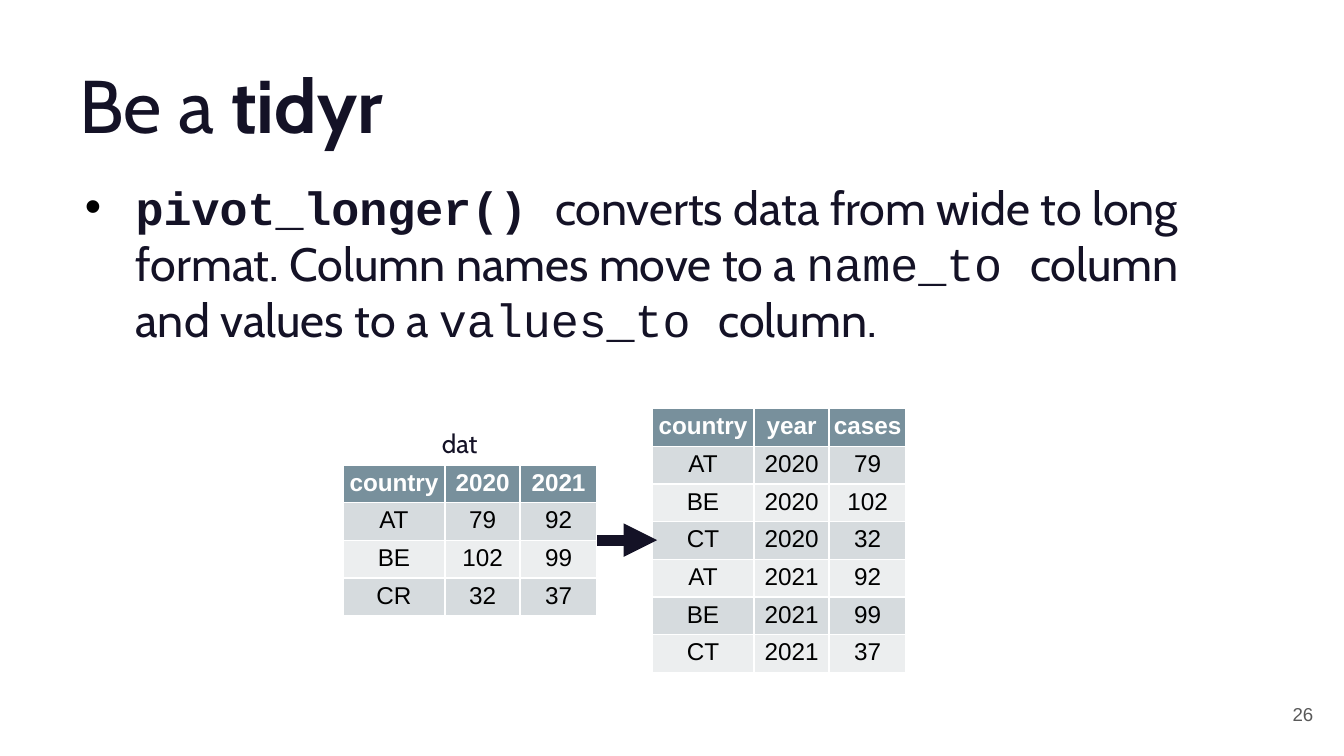
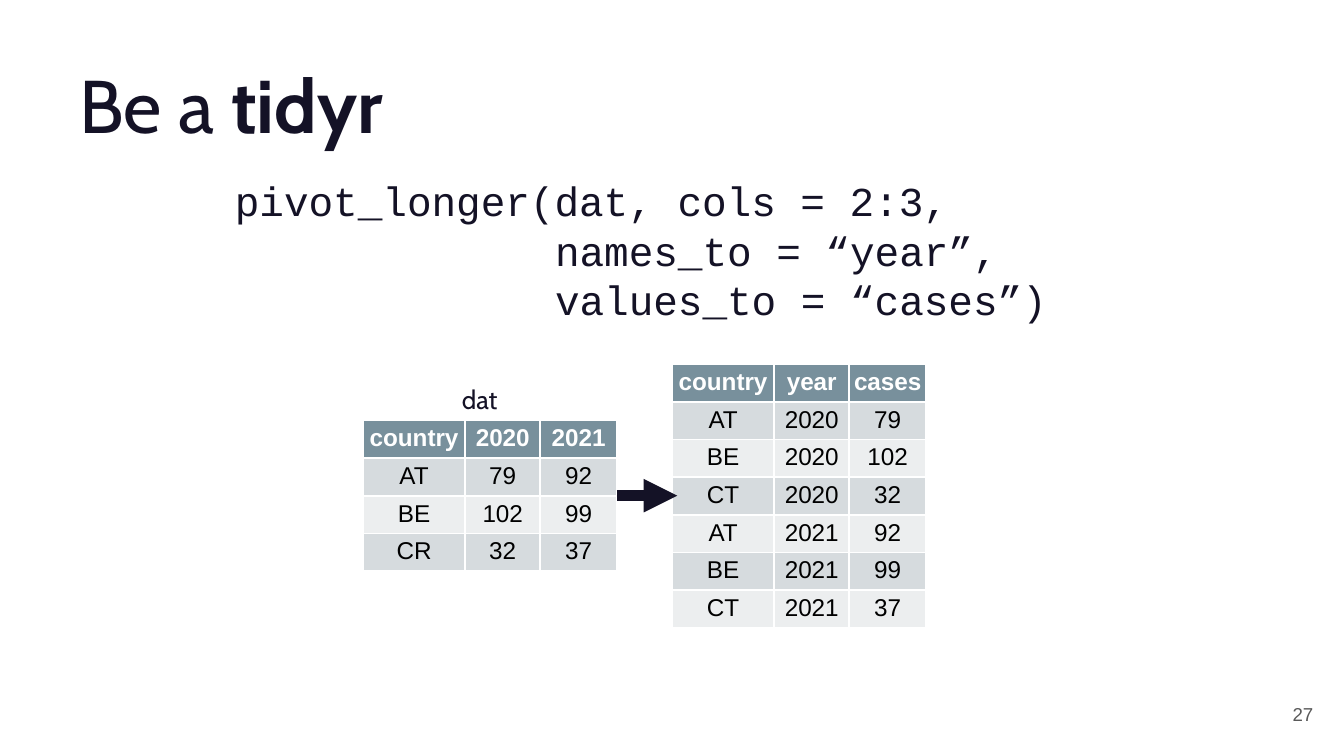
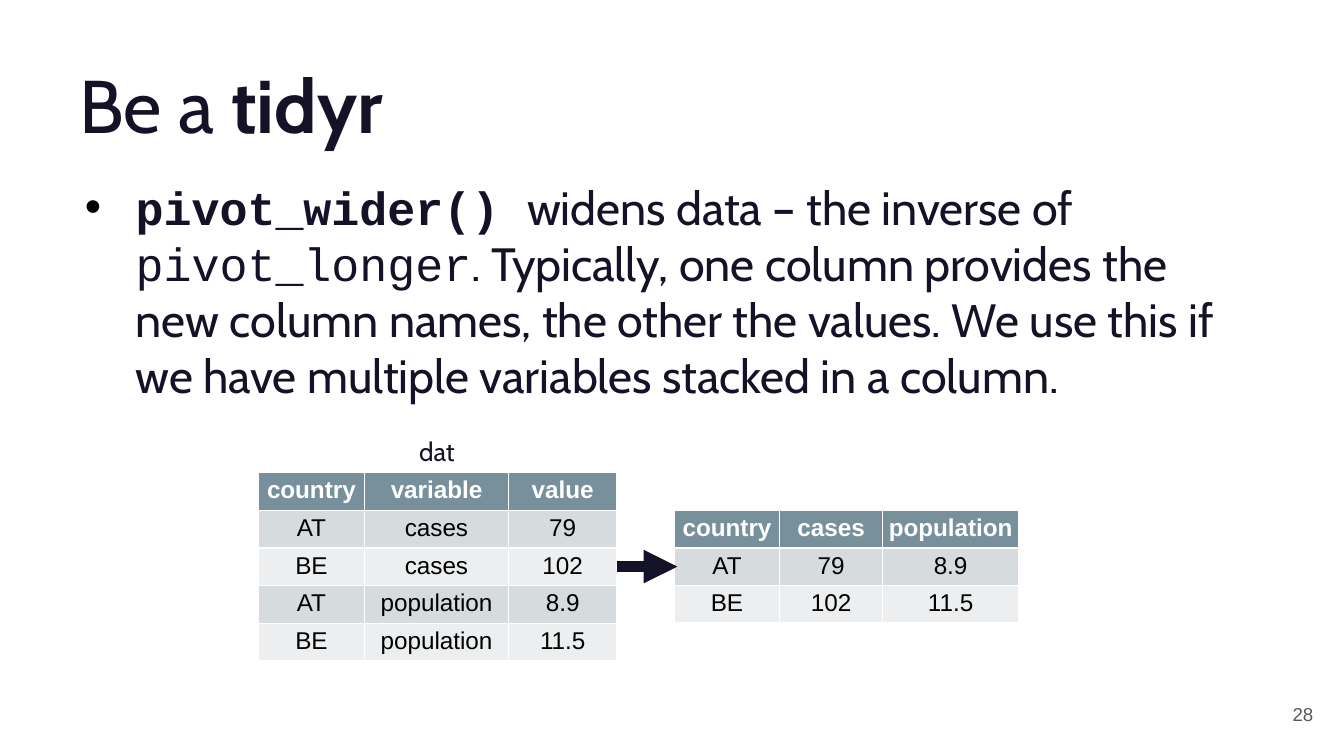
from dataclasses import dataclass

from lxml.etree import SubElement
from pptx import Presentation
from pptx.dml.color import RGBColor
from pptx.enum.shapes import MSO_CONNECTOR
from pptx.enum.text import MSO_ANCHOR, MSO_AUTO_SIZE, PP_ALIGN
from pptx.oxml.ns import qn
from pptx.util import Cm, Pt


@dataclass(frozen=True)
class Theme:
    """Colours, fonts and type sizes of the deck."""

    ink: str = "141226"
    black: str = "000000"
    white: str = "FFFFFF"
    grey: str = "595959"
    header: str = "78909C"
    bands: tuple = ("D6DBDE", "ECEEEF")
    text: str = "Cabin"
    code: str = "Courier New"
    data: str = "Arial"
    title_size: int = 40
    body_size: int = 25
    code_size: int = 22
    label_size: int = 14
    table_size: int = 13
    number_size: int = 10


THEME = Theme()
TITLE_AND_BODY, TITLE_ONLY = 1, 5
ROW_HEIGHT = 0.71
CODE_INDENT = 6.05

WIDE = [
    ("country", "2020", "2021"),
    ("AT", "79", "92"),
    ("BE", "102", "99"),
    ("CR", "32", "37"),
]
LONG = [
    ("country", "year", "cases"),
    ("AT", "2020", "79"),
    ("BE", "2020", "102"),
    ("CT", "2020", "32"),
    ("AT", "2021", "92"),
    ("BE", "2021", "99"),
    ("CT", "2021", "37"),
]
STACKED = [
    ("country", "variable", "value"),
    ("AT", "cases", "79"),
    ("BE", "cases", "102"),
    ("AT", "population", "8.9"),
    ("BE", "population", "11.5"),
]
SPREAD = [
    ("country", "cases", "population"),
    ("AT", "79", "8.9"),
    ("BE", "102", "11.5"),
]
YEAR_COLUMNS = (1.93, 1.42, 1.45)
STACKED_COLUMNS = (2.01, 2.72, 2.05)
SPREAD_COLUMNS = (1.98, 1.95, 2.57)


def style_font(font, name=None, size=None, color=None, bold=None):
    """Set the given properties of a font."""
    if name:
        font.name = name
    if size:
        font.size = Pt(size)
    if color:
        font.color.rgb = RGBColor.from_string(color)
    if bold is not None:
        font.bold = bold


def place(shape, left, top, width, height):
    """Move and size a shape, in centimetres."""
    shape.left, shape.top = Cm(left), Cm(top)
    shape.width, shape.height = Cm(width), Cm(height)


def add_span(para, text, **style):
    """Append a run with its own font settings."""
    span = para.add_run()
    span.text = text
    style_font(span.font, **style)


def add_text(page, left, top, width, height, lines, name, size, color):
    """Add an unwrapped text box, one paragraph for each line."""
    box = page.shapes.add_textbox(Cm(left), Cm(top), Cm(width), Cm(height))
    frame = box.text_frame
    frame.word_wrap = False
    frame.text = "\n".join(lines)
    for para in frame.paragraphs:
        style_font(para.font, name, size, color)
    return frame


def add_page(deck, layout, number):
    """Add a slide with the shared title and its page number."""
    page = deck.slides.add_slide(deck.slide_layouts[layout])
    title = page.shapes.title
    place(title, 1.24, 0.97, 6.4, 1.96)
    frame = title.text_frame
    frame.word_wrap = False
    frame.auto_size = MSO_AUTO_SIZE.SHAPE_TO_FIT_TEXT
    frame.vertical_anchor = MSO_ANCHOR.MIDDLE
    para = frame.paragraphs[0]
    para.alignment = PP_ALIGN.LEFT
    style_font(para.font, THEME.text, THEME.title_size, THEME.ink)
    add_span(para, "Be a ")
    add_span(para, "tidyr", bold=True)

    footer = add_text(page, 23.55, 12.95, 1.52, 1.09, [str(number)],
                      THEME.data, THEME.number_size, THEME.grey)
    footer.word_wrap = True
    footer.vertical_anchor = MSO_ANCHOR.MIDDLE
    footer.margin_top = footer.margin_bottom = Cm(0.25)
    footer.paragraphs[0].alignment = PP_ALIGN.RIGHT
    return page


def fill_body(page, height, function, spans):
    """Write one bulleted paragraph of alternating text and code."""
    body = page.placeholders[1]
    place(body, 1.35, 3.25, 22.71, height)
    frame = body.text_frame
    frame.auto_size = MSO_AUTO_SIZE.SHAPE_TO_FIT_TEXT
    para = frame.paragraphs[0]
    para.space_before = Pt(0)
    style_font(para.font, size=THEME.body_size, color=THEME.ink)
    properties = para._p.get_or_add_pPr()
    properties.set("marL", str(Cm(0.96)))
    properties.set("indent", str(-Cm(0.96)))
    bullet_color = SubElement(properties, qn("a:buClr"))
    SubElement(bullet_color, qn("a:srgbClr"), val=THEME.black)
    SubElement(properties, qn("a:buFont"), typeface=THEME.data)
    SubElement(properties, qn("a:buChar"), char="•")
    properties.append(properties.find(qn("a:defRPr")))
    add_span(para, function, name=THEME.code, bold=True)
    for index, text in enumerate(spans):
        add_span(para, text, name=(THEME.text, THEME.code)[index % 2])


def add_code(page, left, top, lines):
    """Add a call whose later lines align with its first argument."""
    frame = add_text(page, left, top, 16.08, 3.07, lines,
                     THEME.code, THEME.code_size, THEME.ink)
    for para in frame.paragraphs[1:]:
        para._p.get_or_add_pPr().set("marL", str(Cm(CODE_INDENT)))


def add_data_table(page, left, axis, widths, rows):
    """Add a banded table centred vertically on the axis."""
    height = ROW_HEIGHT * len(rows)
    table = page.shapes.add_table(
        len(rows), len(widths), Cm(left), Cm(axis - height / 2),
        Cm(sum(widths)), Cm(height)).table
    for column, width in zip(table.columns, widths):
        column.width = Cm(width)
    for index, values in enumerate(rows):
        table.rows[index].height = Cm(ROW_HEIGHT)
        heading = index == 0
        fill = THEME.header if heading else THEME.bands[(index - 1) % 2]
        color = THEME.white if heading else THEME.black
        for cell, value in zip(table.rows[index].cells, values):
            cell.margin_left = cell.margin_right = Cm(0.08)
            cell.margin_top = cell.margin_bottom = Cm(0.08)
            cell.fill.solid()
            cell.fill.fore_color.rgb = RGBColor.from_string(fill)
            cell.text = value
            para = cell.text_frame.paragraphs[0]
            para.alignment = PP_ALIGN.CENTER
            style_font(para.font, THEME.data, THEME.table_size, color, heading)


def add_arrow(page, left, axis, length):
    """Add a thick horizontal arrow."""
    arrow = page.shapes.add_connector(
        MSO_CONNECTOR.STRAIGHT, Cm(left), Cm(axis), Cm(left + length), Cm(axis))
    arrow.line.width = Pt(6)
    arrow.line.color.rgb = RGBColor.from_string(THEME.ink)
    SubElement(arrow.line._get_or_add_ln(), qn("a:tailEnd"), type="triangle")
    SubElement(arrow._element.spPr, qn("a:effectLst"))


def add_reshape(page, left, axis, before, after, label_shift, gap=1.04):
    """Show a labelled table, an arrow and the reshaped table on one axis."""
    (widths, rows), (new_widths, new_rows) = before, after
    right = left + sum(widths)
    add_data_table(page, left, axis, widths, rows)
    add_data_table(page, right + gap, axis, new_widths, new_rows)
    add_arrow(page, right, axis, 1.14)
    top = axis - ROW_HEIGHT * len(rows) / 2
    add_text(page, left + label_shift, top - 0.83, 1.22, 0.86, ["dat"],
             THEME.text, THEME.label_size, THEME.ink)


def main():
    """Build and save the deck."""
    deck = Presentation()
    deck.slide_width, deck.slide_height = Cm(25.4), Cm(14.29)
    wide, long = (YEAR_COLUMNS, WIDE), (YEAR_COLUMNS, LONG)

    page = add_page(deck, TITLE_AND_BODY, 26)
    fill_body(page, 3.45, "pivot_longer() ", [
        "converts data from wide to long format. Column names move to a ",
        "name_to ",
        "column and values to a ",
        "values_to ",
        "column.",
    ])
    add_reshape(page, 6.48, 10.21, wide, long, 1.62)

    page = add_page(deck, TITLE_ONLY, 27)
    add_reshape(page, 6.86, 9.37, wide, long, 1.62)
    add_code(page, 4.19, 3.2, [
        "pivot_longer(dat, cols = 2:3,",
        "names_to = “year”,",
        "values_to = “cases”)",
    ])

    page = add_page(deck, TITLE_AND_BODY, 28)
    fill_body(page, 4.52, "pivot_wider() ", [
        "widens data – the inverse of ",
        "pivot_longer",
        ". Typically, one column provides the new column names, the other "
        "the values. We use this if we have multiple variables stacked in "
        "a column.",
    ])
    add_reshape(page, 4.88, 10.71, (STACKED_COLUMNS, STACKED),
                (SPREAD_COLUMNS, SPREAD), 2.79, gap=1.09)

    deck.save("out.pptx")


if __name__ == "__main__":
    main()
